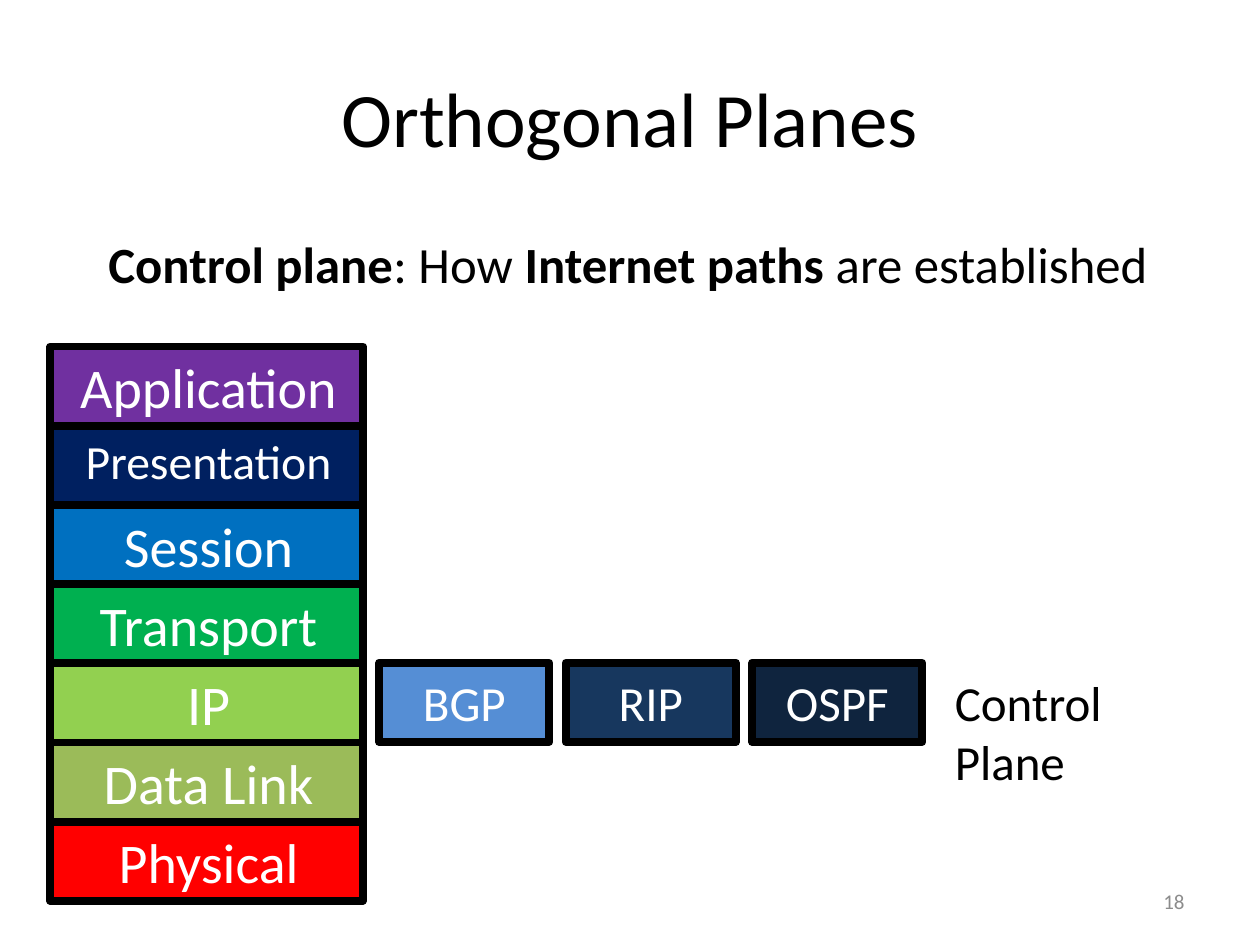
import pptx
import pptx.util
import pptx.dml.color
import pptx.enum.shapes
import pptx.enum.text

Inches = pptx.util.Inches
RGBColor = pptx.dml.color.RGBColor
ALIGN = pptx.enum.text.PP_ALIGN
ANCHOR = pptx.enum.text.MSO_ANCHOR

BLACK = RGBColor(0x00, 0x00, 0x00)
WHITE = RGBColor(0xFF, 0xFF, 0xFF)
GRAY = RGBColor(0x8C, 0x8C, 0x8C)

LAYERS = [
    ("Application", RGBColor(0x70, 0x30, 0xA0), 32),
    ("Presentation", RGBColor(0x00, 0x20, 0x60), 27.2),
    ("Session", RGBColor(0x00, 0x70, 0xC0), 32),
    ("Transport", RGBColor(0x00, 0xB0, 0x50), 32),
    ("IP", RGBColor(0x92, 0xD0, 0x50), 32),
    ("Data Link", RGBColor(0x9B, 0xBB, 0x59), 32),
    ("Physical", RGBColor(0xFF, 0x00, 0x00), 32),
]
PROTOCOLS = [
    ("BGP", RGBColor(0x55, 0x8E, 0xD5)),
    ("RIP", RGBColor(0x17, 0x37, 0x5E)),
    ("OSPF", RGBColor(0x0F, 0x24, 0x3E)),
]
SUMMARY = [("Control plane", True), (": How ", False),
           ("Internet paths", True), (" are established", False)]


def write(sp, runs, size, color, align, anchor):
    """Fill a shape with one paragraph of (text, bold) runs."""
    tf = sp.text_frame
    tf.word_wrap = True
    tf.vertical_anchor = anchor
    p = tf.paragraphs[0]
    p.alignment = align
    for text, bold in runs:
        r = p.add_run()
        r.text = text
        r.font.name = "Calibri"
        r.font.size = pptx.util.Pt(size)
        r.font.bold = bold
        r.font.color.rgb = color


def add_text(s, box, runs, size, color=BLACK, align=ALIGN.CENTER, anchor=ANCHOR.TOP):
    sp = s.shapes.add_textbox(*map(Inches, box))
    write(sp, runs, size, color, align, anchor)


def add_block(s, box, text, fill, size, anchor):
    sp = s.shapes.add_shape(pptx.enum.shapes.MSO_SHAPE.RECTANGLE, *map(Inches, box))
    sp.shadow.inherit = False
    sp.fill.solid()
    sp.fill.fore_color.rgb = fill
    sp.line.color.rgb = BLACK
    sp.line.width = pptx.util.Pt(4.5)
    write(sp, [(text, False)], size, WHITE, ALIGN.CENTER, anchor)
    return sp


def add_layer_stack(s, left, top, width, height):
    step = height / len(LAYERS)
    for i, (name, fill, size) in enumerate(LAYERS):
        sp = add_block(s, (left, top + i * step, width, step), name, fill, size, ANCHOR.TOP)
        sp.text_frame.margin_left = Inches(0.13)


def add_protocol_row(s, left, top, width, height, gap=0.13):
    block = (width - gap * (len(PROTOCOLS) - 1)) / len(PROTOCOLS)
    for i, (name, fill) in enumerate(PROTOCOLS):
        box = (left + i * (block + gap), top, block, height)
        add_block(s, box, name, fill, 28, ANCHOR.MIDDLE)


def main():
    prs = pptx.Presentation()
    prs.slide_width, prs.slide_height = Inches(10), Inches(7.5)
    s = prs.slides.add_slide(prs.slide_layouts[6])
    add_text(s, (0.5, 0.3, 9, 1.25), [("Orthogonal Planes", False)], 44, anchor=ANCHOR.MIDDLE)
    add_text(s, (0.68, 1.8, 8.61, 0.59), SUMMARY, 29)
    add_layer_stack(s, 0.4, 2.75, 2.48, 4.4)
    add_protocol_row(s, 3.01, 5.26, 4.31, 0.63)
    add_text(s, (7.48, 5.29, 2.25, 0.57), [("Control Plane", False)], 28, align=ALIGN.LEFT)
    add_text(s, (7.17, 6.95, 2.33, 0.4), [("18", False)], 12, GRAY, ALIGN.RIGHT, ANCHOR.MIDDLE)
    prs.save("out.pptx")


if __name__ == "__main__":
    main()
